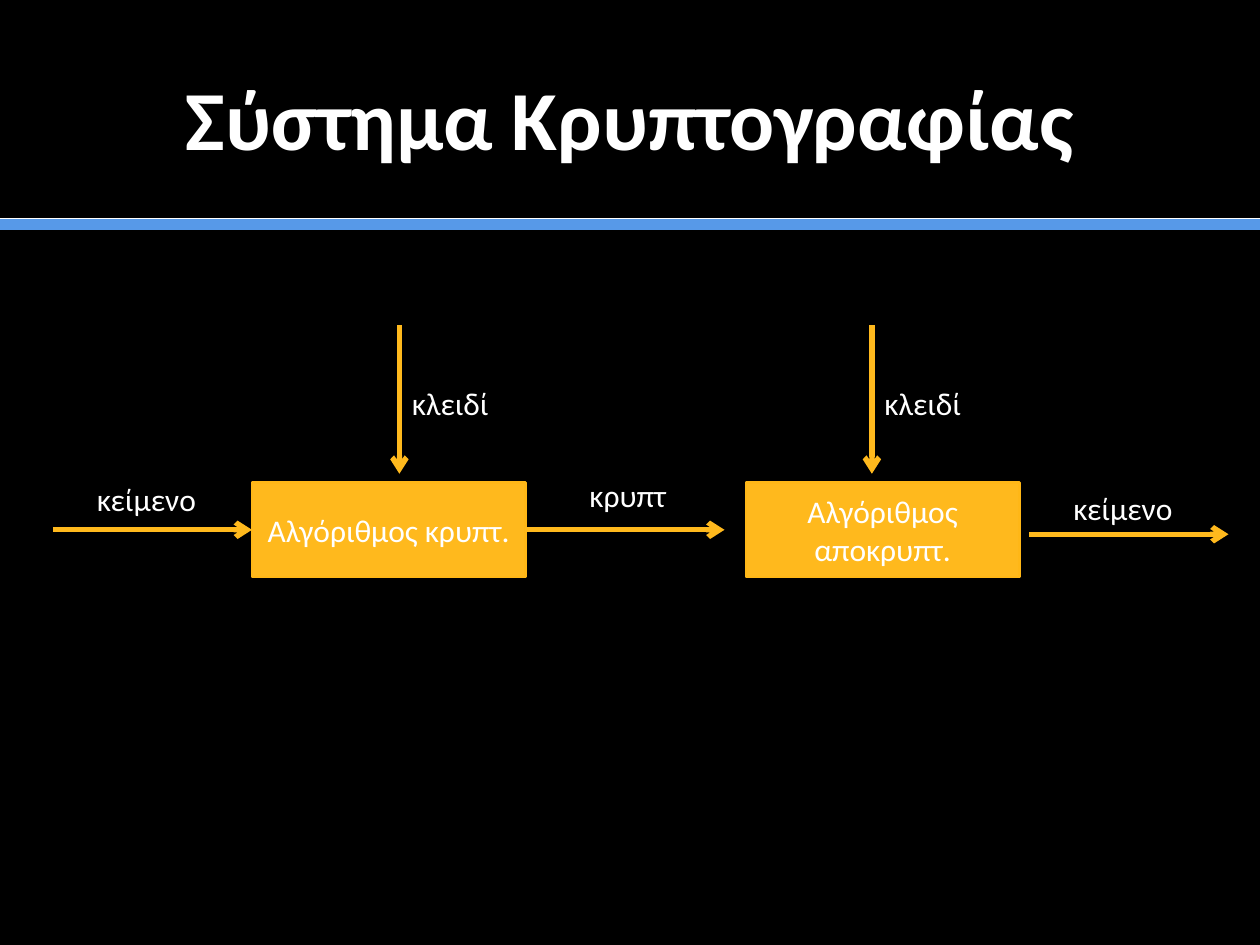
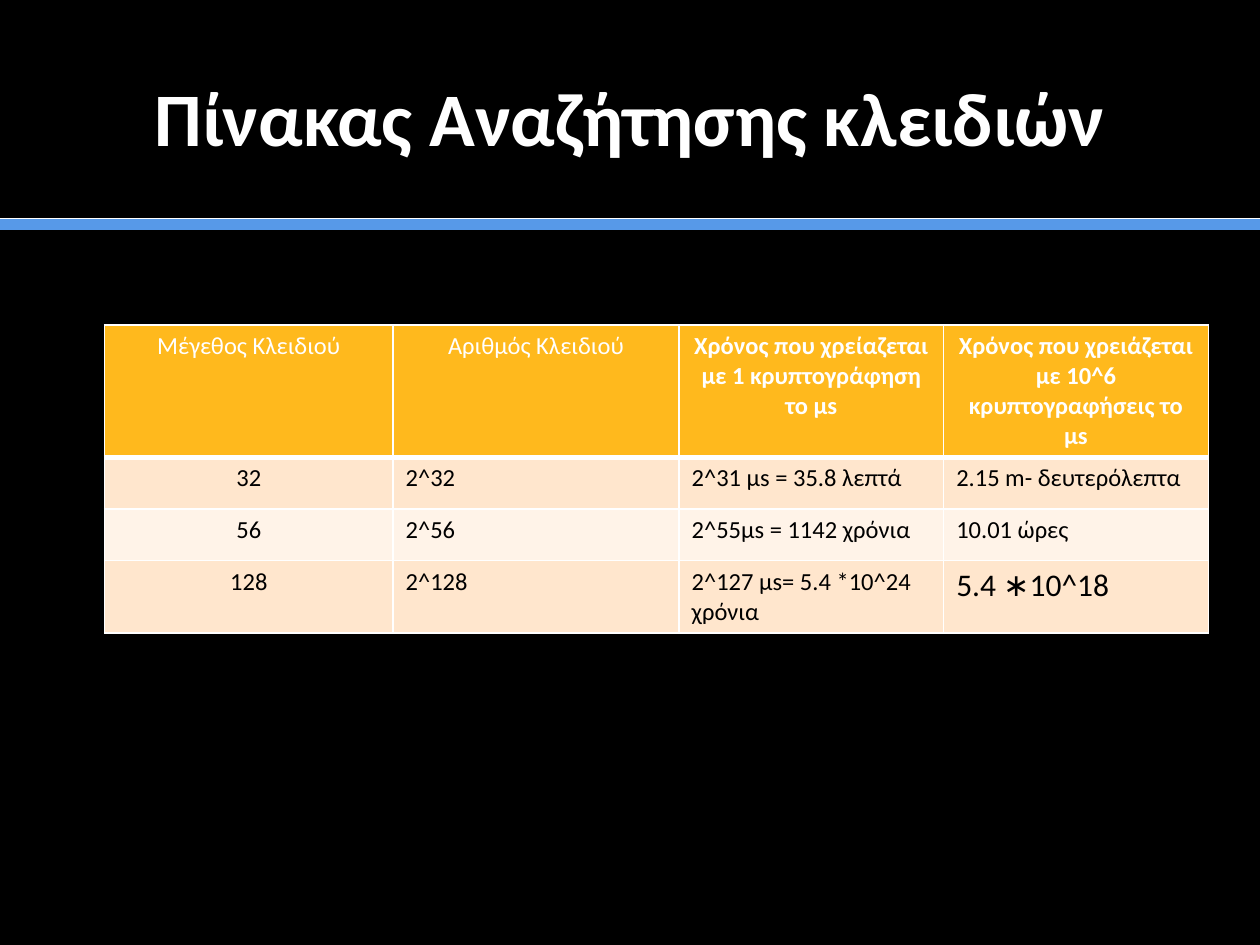
from lxml import etree
from pptx import Presentation
from pptx.dml.color import RGBColor
from pptx.enum.shapes import MSO_CONNECTOR, MSO_SHAPE
from pptx.enum.text import MSO_ANCHOR, MSO_AUTO_SIZE, PP_ALIGN
from pptx.oxml.ns import qn
from pptx.util import Inches, Pt

LINE = MSO_CONNECTOR.STRAIGHT
RECT = MSO_SHAPE.RECTANGLE
MIDDLE = MSO_ANCHOR.MIDDLE
GROW = MSO_AUTO_SIZE.SHAPE_TO_FIT_TEXT
FIXED = MSO_AUTO_SIZE.NONE
LEFT, CENTER = PP_ALIGN.LEFT, PP_ALIGN.CENTER

BLACK, WHITE, BLUE = "000000", "FFFFFF", "5799E8"
GOLD, EDGE = "FFB91D", "FFB717"
BANDS = ["FFE6CD", "FFF3E8"]

BOX_W, BOX_H, BOX_TOP = 2.17, 0.75, 3.83
BOX_MID = BOX_TOP + BOX_H / 2
FLOW = 1.58  # length of each horizontal arrow
TOP_SIDE, LEFT_SIDE, BOTTOM_SIDE, RIGHT_SIDE = range(4)

COLS = [2.29, 2.27, 2.1, 2.1]
ROWS = [1.05, 0.41, 0.41, 0.57]
HEAD = ["Μέγεθος Κλειδιού", "Αριθμός Κλειδιού",
        "Χρόνος που χρείαζεται με 1 κρυπτογράφηση το μs",
        "Χρόνος που χρειάζεται με 10^6 κρυπτογραφήσεις το μs"]
BODY = [["32", "2^32", "2^31 μs = 35.8 λεπτά", "2.15 m- δευτερόλεπτα"],
        ["56", "2^56", "2^55μs = 1142 χρόνια", "10.01 ώρες"],
        ["128", "2^128", "2^127 μs= 5.4 *10^24 χρόνια", "5.4 ∗10^18"]]


def rgb(code):
    return RGBColor.from_string(code)


def write(frame, text, size=18, color=WHITE, bold=False, align=LEFT):
    frame.text = text
    para = frame.paragraphs[0]
    para.alignment = align
    font = para.runs[0].font
    look = {"name": "Calibri", "size": Pt(size), "bold": bold}
    for name, value in look.items():
        setattr(font, name, value)
    font.color.rgb = rgb(color)


def add_line(slide, start, end, color, width):
    line = slide.shapes.add_connector(LINE, *map(Inches, start + end))
    line.line.color.rgb = rgb(color)
    line.line.width = Pt(width)
    etree.SubElement(line._element.spPr, qn("a:effectLst"))
    return line


def add_arrow(slide, start, end):
    arrow = add_line(slide, start, end, GOLD, 3)
    etree.SubElement(arrow.line._get_or_add_ln(), qn("a:tailEnd"), type="arrow")
    return arrow


def add_label(slide, left, top, text):
    label = slide.shapes.add_textbox(*map(Inches, (left, top, 1.33, 0.4)))
    frame = label.text_frame
    frame.word_wrap = True
    frame.auto_size = GROW
    write(frame, text)


def add_box(slide, left, text):
    box = slide.shapes.add_shape(
        RECT, *map(Inches, (left, BOX_TOP, BOX_W, BOX_H)))
    box.shadow.inherit = False
    box.fill.solid()
    box.fill.fore_color.rgb = rgb(GOLD)
    box.line.color.rgb = rgb(EDGE)
    box.line.width = Pt(1.5)
    box.text_frame.vertical_anchor = MIDDLE
    write(box.text_frame, text, align=CENTER)
    return box


def add_key(slide, x):
    """Draw the key arrow that points down at a box, with its label."""
    add_arrow(slide, (x, 2.58), (x, 3.76))
    add_label(slide, x, 3, "κλειδί")


def add_slide(prs, text, size):
    """Add a slide with the shared title and the two-line band."""
    slide = prs.slides.add_slide(prs.slide_layouts[5])
    for y, color, width in [(1.78, BLUE, 7), (1.73, WHITE, 0.5)]:
        add_line(slide, (0, y), (10, y), color, width)
    title = slide.shapes.title
    place = {"left": 0.5, "top": 0.3, "width": 9, "height": 1.25}
    for name, value in place.items():
        setattr(title, name, Inches(value))
    title.text_frame.auto_size = FIXED
    title.text_frame.vertical_anchor = MIDDLE
    write(title.text_frame, text, size, bold=True, align=CENTER)
    return slide


def set_cell(cell, fill, base, text, **look):
    """Fill and frame a cell; base is the width of its bottom border."""
    props = cell._tc.get_or_add_tcPr()
    for side, width in [("L", 1), ("R", 1), ("T", 1), ("B", base)]:
        edge = etree.SubElement(props, qn(f"a:ln{side}"), w=str(Pt(width)))
        solid = etree.SubElement(edge, qn("a:solidFill"))
        etree.SubElement(solid, qn("a:srgbClr"), val=WHITE)
    cell.fill.solid()
    cell.fill.fore_color.rgb = rgb(fill)
    write(cell.text_frame, text, **look)


def add_grid(slide, left, top):
    grid = slide.shapes.add_table(
        len(ROWS), len(COLS),
        *map(Inches, (left, top, sum(COLS), sum(ROWS)))).table
    for col, width in zip(grid.columns, COLS):
        col.width = Inches(width)
    for row, height in zip(grid.rows, ROWS):
        row.height = Inches(height)
    for c, text in enumerate(HEAD):
        set_cell(grid.cell(0, c), GOLD, 3, text,
                 size=14, bold=c > 1, align=CENTER)
    for r, texts in enumerate(BODY):
        for c, text in enumerate(texts):
            last = r == len(BODY) - 1 and c == len(COLS) - 1
            set_cell(grid.cell(r + 1, c), BANDS[r % 2], 1, text,
                     size=18 if last else 14, color=BLACK,
                     align=LEFT if c else CENTER)


def draw_system(prs):
    slide = add_slide(prs, "Σύστημα Κρυπτογραφίας", 48)
    coder = add_box(slide, 2, "Αλγόριθμος κρυπτ.")
    add_box(slide, 5.92, "Αλγόριθμος αποκρυπτ.")
    for x in (3.17, 6.92):
        add_key(slide, x)

    plain = add_arrow(slide, (2 - FLOW, BOX_MID), (2, BOX_MID))
    plain.end_connect(coder, LEFT_SIDE)
    cipher = add_arrow(slide, (4.17, BOX_MID), (4.17 + FLOW, BOX_MID))
    cipher.begin_connect(coder, RIGHT_SIDE)
    add_arrow(slide, (8.17, 4.24), (8.17 + FLOW, 4.24))

    add_label(slide, 0.67, 3.76, "κείμενο")
    add_label(slide, 4.58, 3.73, "κρυπτ")
    add_label(slide, 8.42, 3.83, "κείμενο")


def main():
    prs = Presentation()
    prs.slide_width, prs.slide_height = Inches(10), Inches(7.5)
    back = prs.slide_master.background.fill
    back.solid()
    back.fore_color.rgb = rgb(BLACK)
    draw_system(prs)
    add_grid(add_slide(prs, "Πίνακας Αναζήτησης κλειδιών", 43.2), 0.83, 2.58)
    prs.save("out.pptx")


if __name__ == "__main__":
    main()
